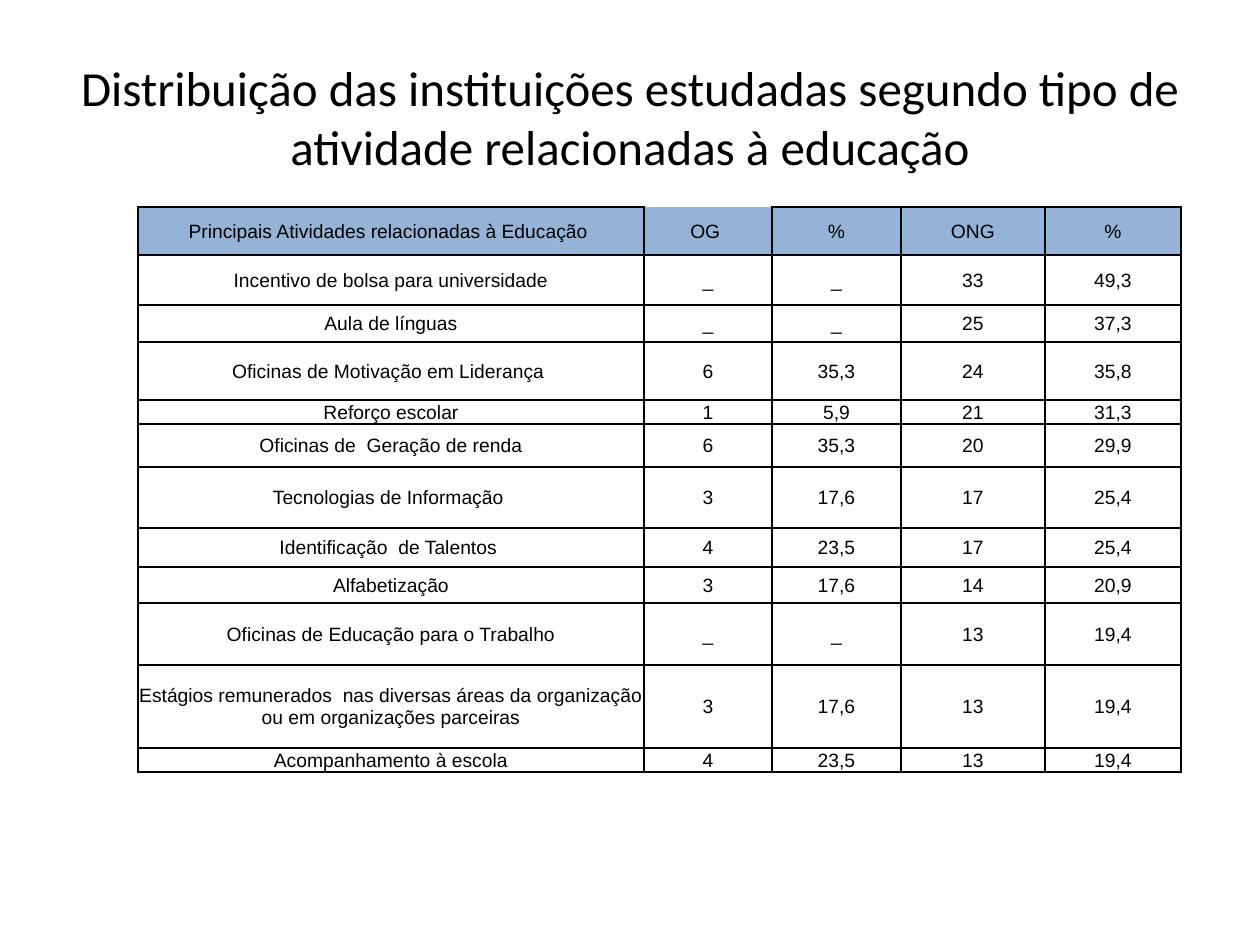
from dataclasses import dataclass

from lxml.etree import SubElement
from pptx import Presentation
from pptx.dml.color import RGBColor
from pptx.enum.text import MSO_ANCHOR as Anchor, PP_ALIGN as Align
from pptx.oxml.ns import qn
from pptx.util import Emu, Pt


@dataclass(frozen=True)
class Theme:
    """Colours, fonts and type sizes of the slide."""
    ink: str = "000000"
    header_fill: str = "95B3D7"
    title_font: str = "Calibri"
    table_font: str = "Arial"
    title_size: int = 28
    table_size: int = 11
    border_width: int = 1


THEME = Theme()
PX_PER_INCH = 126
SLIDE_SIZE = (1260, 945)
TITLE_BOX = (63, 38, 1134, 157)
TABLE_BOX = (138, 207, 1043, 565)
COLUMN_WIDTHS = (506, 128, 129, 144, 136)
ROW_HEIGHTS = (48, 50, 37, 58, 24, 43, 61, 39, 36, 62, 83, 24)
TITLE = "Distribuição das instituições estudadas segundo tipo de atividade relacionadas à educação"
ROWS = (
    ("Principais Atividades relacionadas à Educação ", "OG ", "%", "ONG", "%"),
    ("Incentivo de bolsa para universidade", "_", "_", "33", "49,3"),
    ("Aula de línguas", "_", "_", "25", "37,3"),
    ("Oficinas de Motivação em Liderança ", "6", "35,3", "24", "35,8"),
    ("Reforço escolar", "1", "5,9", "21", "31,3"),
    ("Oficinas de  Geração de renda", "6", "35,3", "20", "29,9"),
    ("Tecnologias de Informação ", "3", "17,6", "17", "25,4"),
    ("Identificação  de Talentos ", "4", "23,5", "17", "25,4"),
    ("Alfabetização", "3", "17,6", "14", "20,9"),
    ("Oficinas de Educação para o Trabalho", "_", "_", "13", "19,4"),
    ("Estágios remunerados  nas diversas áreas da organização ou em organizações parceiras",
     "3", "17,6", "13", "19,4"),
    ("Acompanhamento à escola", "4", "23,5", "13", "19,4"),
)
OPEN_TOP_CELL = (0, 1)


def px(length):
    """Turn pixels into EMU."""
    return Emu(round(length * 914400 / PX_PER_INCH))


def write_centred(text_frame, text, font_name, size):
    """Write one centred paragraph in the ink colour."""
    text_frame.text = text
    paragraph = text_frame.paragraphs[0]
    paragraph.alignment = Align.CENTER
    font = paragraph.runs[0].font
    font.name, font.size = font_name, Pt(size)
    font.color.rgb = RGBColor.from_string(THEME.ink)


def add_title(slide, box):
    """Place the title in its box."""
    text_frame = slide.shapes.add_textbox(*map(px, box)).text_frame
    text_frame.word_wrap = True
    text_frame.vertical_anchor = Anchor.MIDDLE
    write_centred(text_frame, TITLE, THEME.title_font, THEME.title_size)


def set_borders(cell, open_top):
    """Draw the four cell borders, leaving the top one out when it is open."""
    properties = cell._tc.get_or_add_tcPr()
    for side in "LRTB":
        line = SubElement(properties, qn(f"a:ln{side}"), w=str(Pt(THEME.border_width)))
        if side == "T" and open_top:
            SubElement(line, qn("a:noFill"))
        else:
            fill = SubElement(line, qn("a:solidFill"))
            SubElement(fill, qn("a:srgbClr"), val=THEME.ink)


def format_cell(cell, text, is_header, open_top):
    """Fill in one cell with its text, margins, borders and colour."""
    cell.margin_left = cell.margin_right = cell.margin_top = px(1)
    cell.margin_bottom = 0
    cell.vertical_anchor = Anchor.MIDDLE
    write_centred(cell.text_frame, text, THEME.table_font, THEME.table_size)
    set_borders(cell, open_top)
    if is_header:
        cell.fill.solid()
        cell.fill.fore_color.rgb = RGBColor.from_string(THEME.header_fill)
    else:
        cell.fill.background()


def add_activity_table(slide, box):
    """Place the table of educational activities in its box."""
    table = slide.shapes.add_table(len(ROWS), len(COLUMN_WIDTHS), *map(px, box)).table
    table.first_row = table.horz_banding = False
    for column, width in zip(table.columns, COLUMN_WIDTHS):
        column.width = px(width)
    for row_index, (height, texts) in enumerate(zip(ROW_HEIGHTS, ROWS)):
        table.rows[row_index].height = px(height)
        for column_index, text in enumerate(texts):
            position = (row_index, column_index)
            format_cell(table.cell(*position), text, row_index == 0, position == OPEN_TOP_CELL)


def main():
    """Build and save the presentation."""
    presentation = Presentation()
    presentation.slide_width, presentation.slide_height = map(px, SLIDE_SIZE)
    slide = presentation.slides.add_slide(presentation.slide_layouts[6])
    add_title(slide, TITLE_BOX)
    add_activity_table(slide, TABLE_BOX)
    presentation.save("out.pptx")


if __name__ == "__main__":
    main()
